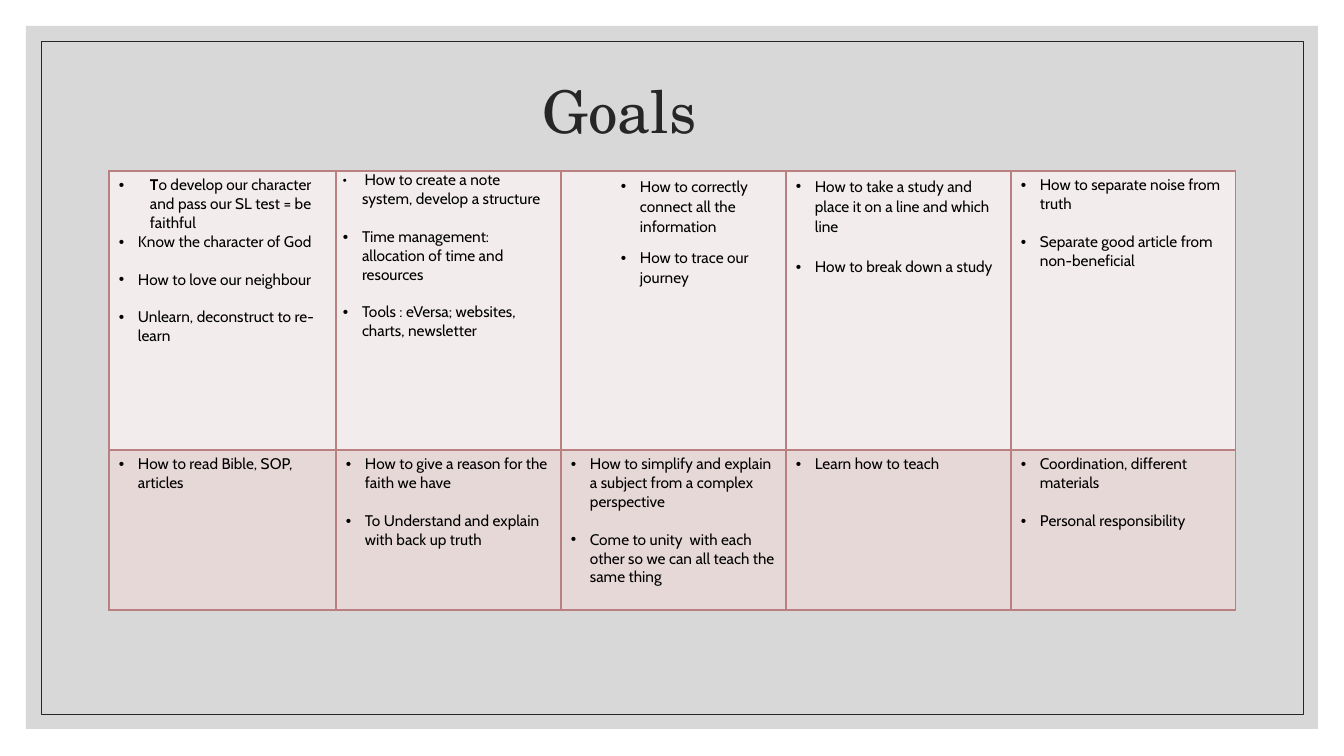
from lxml.etree import SubElement
from pptx import Presentation
from pptx.dml.color import RGBColor
from pptx.enum.shapes import MSO_SHAPE
from pptx.enum.text import MSO_ANCHOR, PP_ALIGN
from pptx.oxml.ns import qn
from pptx.util import Pt

PX = 914400 / 100.8  # EMU in one px

WHITE = RGBColor(0xFF, 0xFF, 0xFF)
GREY = RGBColor(0xBF, 0xBF, 0xBF)
INK = RGBColor(0x26, 0x26, 0x26)
BLACK = RGBColor(0, 0, 0)
ROSE = RGBColor(0xBA, 0x7F, 0x80)
ROW_FILLS = [RGBColor(0xF3, 0xEC, 0xED), RGBColor(0xE7, 0xD8, 0xD8)]

COLUMN_WIDTHS = [227, 225, 225, 225, 225]
ROW_HEIGHTS = [279, 160]
INDENT = 19

# Each cell: its bullets and, where they differ, its paragraph settings.
# A bullet is a text, or a list of (text, run format) pairs.
GOALS = [
    [
        (["To develop our character and pass our SL test = be faithful",
          "Know the character of God",
          "How to love our neighbour",
          "Unlearn, deconstruct to re-learn"],
         {"first_indent": 31, "gaps": [0, 0, 13.5, 13.5], "bold_lead": 1}),
        ([[(" ", {"size": 8, "font": "Calibri", "bold": True}),
           ("How to create a note system, develop a structure", {})],
          "Time management: allocation of time and resources",
          "Tools : eVersa; websites, charts, newsletter"],
         {"inset": (7, 0)}),
        (["How to correctly connect all the information",
          "How to trace our journey"],
         {"left": 69, "spacing": 1.07, "gaps": [0, 8]}),
        (["How to take a study and place it on a line and which line",
          "How to break down a study"],
         {"spacing": 1.07, "gaps": [0, 14.5]}),
        (["How to separate noise from truth",
          "Separate good article from non-beneficial"], {}),
    ],
    [
        (["How to read Bible, SOP, articles"], {}),
        (["How to give a reason for the faith we have",
          "To Understand and explain with back up truth"], {}),
        (["How to simplify and explain a subject from a complex perspective",
          "Come to unity  with each other so we can all teach the same thing"], {}),
        (["Learn how to teach"], {}),
        (["Coordination, different materials",
          "Personal responsibility"], {}),
    ],
]


def px(n):
    return round(n * PX)


def add_text(p, text, size=11, font="Cabin", color=BLACK, bold=False):
    r = p.add_run()
    r.text = text
    r.font.size = Pt(size)
    r.font.name = font
    r.font.color.rgb = color
    r.font.bold = bold


def add_bullet(p, left, hang):
    pPr = p._p.get_or_add_pPr()
    pPr.set("marL", str(px(left)))
    pPr.set("indent", str(-px(hang)))
    SubElement(pPr, qn("a:buFont"), typeface="Arial")
    SubElement(pPr, qn("a:buChar"), char="•")


def add_borders(cell):
    tcPr = cell._tc.get_or_add_tcPr()
    for side in ("a:lnL", "a:lnR", "a:lnT", "a:lnB"):
        ln = SubElement(tcPr, qn(side), w=str(Pt(1)))
        fill = SubElement(ln, qn("a:solidFill"))
        SubElement(fill, qn("a:srgbClr"), val=str(ROSE))


def add_rect(slide, x, y, w, h):
    s = slide.shapes.add_shape(MSO_SHAPE.RECTANGLE, px(x), px(y), px(w), px(h))
    s.shadow.inherit = False
    return s


def add_frame(slide, x, y, w, h):
    # Translucent panel
    panel = add_rect(slide, x, y, w, h)
    panel.fill.solid()
    panel.fill.fore_color.rgb = GREY
    color = panel._element.spPr.find(qn("a:solidFill")).find(qn("a:srgbClr"))
    SubElement(color, qn("a:alpha"), val="60000")
    panel.line.fill.background()

    # Thin inner outline
    gap = 15
    outline = add_rect(slide, x + gap, y + gap, w - 2 * gap, h - 2 * gap)
    outline.fill.background()
    outline.line.color.rgb = INK
    outline.line.width = Pt(0.5)


def add_title(slide, x, y, w, h):
    tf = slide.shapes.add_textbox(px(x), px(y), px(w), px(h)).text_frame
    tf.word_wrap = True
    tf.vertical_anchor = MSO_ANCHOR.MIDDLE
    p = tf.paragraphs[0]
    p.alignment = PP_ALIGN.CENTER
    p.line_spacing = 0.9
    add_text(p, "Goals", size=42, font="TeX Gyre Schola", color=INK)


def fill_cell(cell, bullets, left=INDENT, first_indent=None, spacing=1.0,
              gaps=(0, 13.5, 13.5), inset=(10, 5), bold_lead=0):
    cell.margin_left = cell.margin_right = px(inset[0])
    cell.margin_top = cell.margin_bottom = px(inset[1])
    tf = cell.text_frame
    for i, bullet in enumerate(bullets):
        p = tf.add_paragraph() if i else tf.paragraphs[0]
        p.line_spacing = spacing
        p.space_before = Pt(gaps[i])
        if i == 0 and first_indent:
            add_bullet(p, first_indent, first_indent)
        else:
            add_bullet(p, left, INDENT)
        if i == 0 and bold_lead:
            bullet = [(bullet[:bold_lead], {"bold": True}),
                      (bullet[bold_lead:], {})]
        runs = [(bullet, {})] if isinstance(bullet, str) else bullet
        for text, style in runs:
            add_text(p, text, **style)


def add_goals_table(slide, x, y):
    table = slide.shapes.add_table(
        len(ROW_HEIGHTS), len(COLUMN_WIDTHS), px(x), px(y),
        px(sum(COLUMN_WIDTHS)), px(sum(ROW_HEIGHTS))).table
    table.first_row = table.horz_banding = False
    for column, width in zip(table.columns, COLUMN_WIDTHS):
        column.width = px(width)
    for row, height, goals, color in zip(table.rows, ROW_HEIGHTS, GOALS, ROW_FILLS):
        row.height = px(height)
        for cell, (bullets, style) in zip(row.cells, goals):
            add_borders(cell)
            cell.fill.solid()
            cell.fill.fore_color.rgb = color
            fill_cell(cell, bullets, **style)


def main():
    prs = Presentation()
    prs.slide_width, prs.slide_height = px(1344), px(756)
    slide = prs.slides.add_slide(prs.slide_layouts[6])
    slide.background.fill.solid()
    slide.background.fill.fore_color.rgb = WHITE
    add_frame(slide, 26, 26, 1292, 703)
    add_title(slide, 118, 71, 1003, 86)
    add_goals_table(slide, 109, 171)
    prs.save("out.pptx")


if __name__ == "__main__":
    main()
